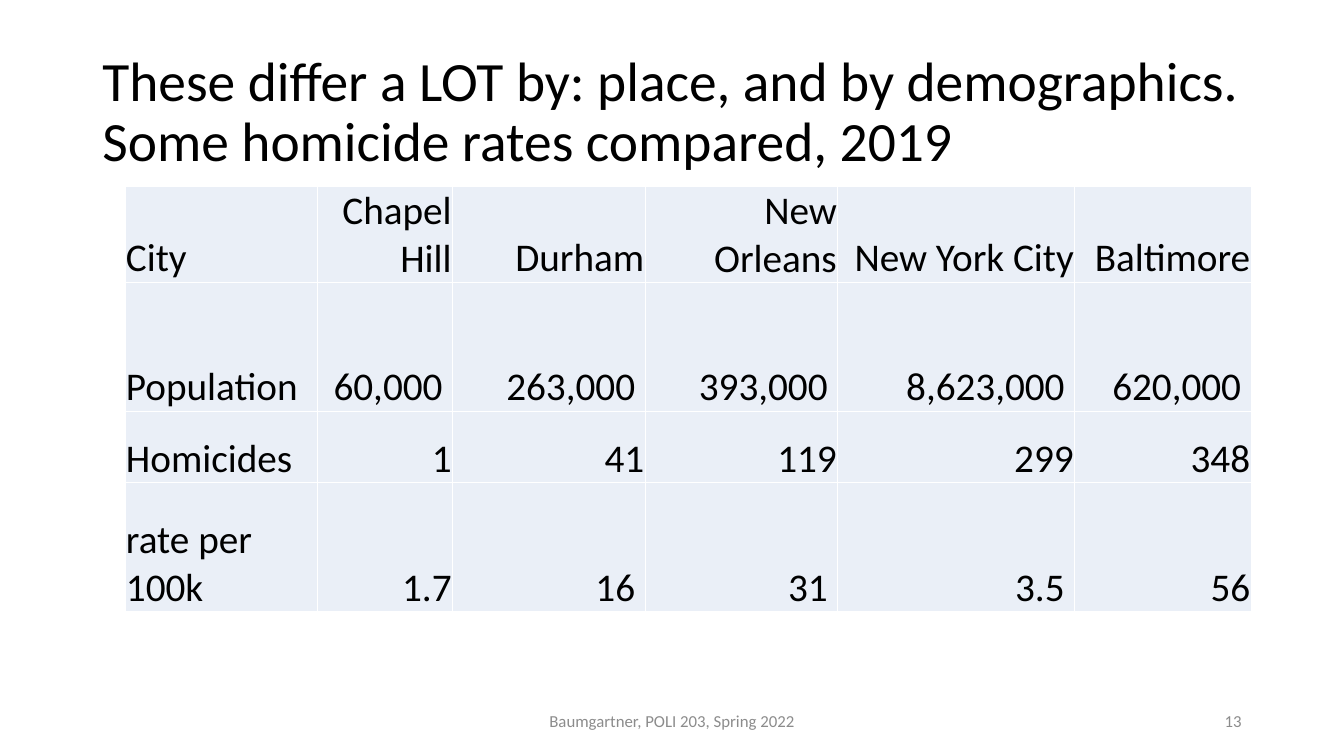
from lxml.etree import SubElement
from pptx import Presentation
from pptx.dml.color import RGBColor as RGB
from pptx.enum.text import MSO_ANCHOR as ANCHOR, PP_ALIGN as ALIGN
from pptx.oxml.ns import qn
from pptx.util import Inches, Pt

COLORS = {"ink": "000000", "muted": "8C8C8C", "cell": "EAEFF7", "rule": "FFFFFF"}
FONT = "Calibri"
WIDTH, HEIGHT = 13.33, 7.5
COLUMNS = [1.91, 1.34, 1.91, 1.91, 2.35, 1.75]
ROWS = [0.95, 1.28, 0.71, 1.28]
RATES = [
    ["City", "Chapel Hill", "Durham", "New Orleans", "New York City", "Baltimore"],
    ["Population", "60,000", "263,000", "393,000", "8,623,000", "620,000"],
    ["Homicides", "1", "41", "119", "299", "348"],
    ["rate per 100k", "1.7", "16", "31", "3.5", "56"],
]
INDENTED = {(1, col) for col in range(1, 6)} | {(3, 2), (3, 3), (3, 4)}


def write(tf, text, size=28, color="ink", align=ALIGN.LEFT, spacing=1.0):
    tf.word_wrap = True
    p = tf.paragraphs[0]
    p.text = text.replace("\n", "\v")
    p.alignment = align
    p.line_spacing = spacing
    for r in p.runs:
        r.font.name = FONT
        r.font.size = Pt(size)
        r.font.color.rgb = RGB.from_string(COLORS[color])


def add_text(slide, text, x, y, w, h, **style):
    sp = slide.shapes.add_textbox(
        Inches(x * WIDTH), Inches(y * HEIGHT), Inches(w * WIDTH), Inches(h * HEIGHT))
    sp.text_frame.vertical_anchor = ANCHOR.MIDDLE
    write(sp.text_frame, text, **style)


def add_borders(cell):
    props = cell._tc.get_or_add_tcPr()
    for i, side in enumerate(("lnL", "lnR", "lnT", "lnB")):
        line = SubElement(props, qn(f"a:{side}"), w=str(Pt(1)))
        fill = SubElement(line, qn("a:solidFill"))
        SubElement(fill, qn("a:srgbClr"), val=COLORS["rule"])
        props.insert(i, line)


def format_cell(cell, text, heading, indented):
    cell.margin_left = cell.margin_top = Inches(0.01)
    cell.margin_right = Inches(0.1 if indented else 0.01)
    cell.margin_bottom = 0
    cell.vertical_anchor = ANCHOR.BOTTOM
    cell.fill.solid()
    cell.fill.fore_color.rgb = RGB.from_string(COLORS["cell"])
    add_borders(cell)
    write(cell.text_frame, text, align=ALIGN.LEFT if heading else ALIGN.RIGHT)


def add_rate_table(slide, x, y):
    table = slide.shapes.add_table(
        len(ROWS), len(COLUMNS), Inches(x * WIDTH), Inches(y * HEIGHT),
        Inches(sum(COLUMNS)), Inches(sum(ROWS))).table
    table.first_row = table.horz_banding = False
    for column, width in zip(table.columns, COLUMNS):
        column.width = Inches(width)
    for row, height in zip(table.rows, ROWS):
        row.height = Inches(height)
    for i, values in enumerate(RATES):
        for j, text in enumerate(values):
            format_cell(table.cell(i, j), text, j == 0, (i, j) in INDENTED)


def main():
    prs = Presentation()
    prs.slide_width, prs.slide_height = Inches(WIDTH), Inches(HEIGHT)
    slide = prs.slides.add_slide(prs.slide_layouts[6])
    add_text(slide, "These differ a LOT by: place, and by demographics.\n"
             "Some homicide rates compared, 2019",
             0.0688, 0.0533, 0.8625, 0.1933, size=39.6, spacing=0.9)
    add_rate_table(slide, 0.093, 0.2467)
    footer = {"y": 0.9267, "h": 0.0533, "size": 12, "color": "muted"}
    add_text(slide, "Baumgartner, POLI 203, Spring 2022",
             x=0.3313, w=0.3375, align=ALIGN.CENTER, **footer)
    add_text(slide, "13", x=0.7063, w=0.225, align=ALIGN.RIGHT, **footer)
    prs.save("out.pptx")


if __name__ == "__main__":
    main()
